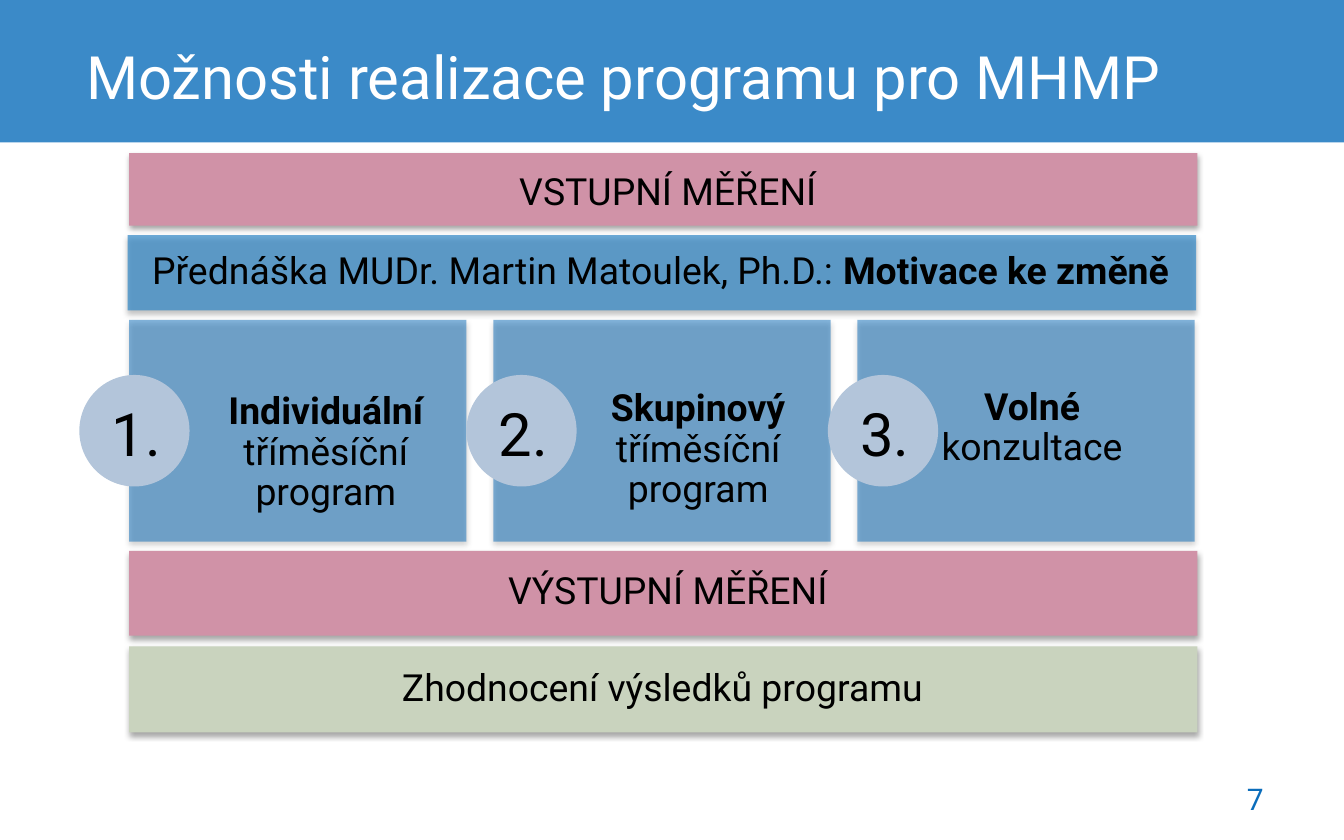
from dataclasses import dataclass

from lxml.etree import SubElement
from pptx import Presentation
from pptx.dml.color import RGBColor
from pptx.enum.shapes import MSO_SHAPE
from pptx.enum.text import MSO_ANCHOR, MSO_AUTO_SIZE, PP_ALIGN
from pptx.oxml.ns import qn
from pptx.util import Inches, Pt


@dataclass(frozen=True)
class Theme:
    font: str = "Roboto"
    brand: str = "0B6DBB"
    lecture: str = "3188C8"
    measure: str = "D092A7"
    result: str = "C9D3BE"
    badge: str = "B3C5DA"
    white: str = "FFFFFF"
    black: str = "000000"
    title_size: int = 32
    label_size: int = 20
    page_number_size: int = 16


THEME = Theme()


def place(item, box):
    item.left, item.top, item.width, item.height = (Inches(length) for length in box)


def add_panel(page, box, color, opacity=100, shape=MSO_SHAPE.RECTANGLE, shadow=False):
    panel = page.shapes.add_shape(shape, *(Inches(length) for length in box))
    panel.shadow.inherit = False
    panel.line.fill.background()
    panel.fill.solid()
    panel.fill.fore_color.rgb = RGBColor.from_string(color)
    if opacity < 100:
        tint = panel.fill._xPr.find(qn("a:solidFill"))[0]
        SubElement(tint, qn("a:alpha"), val=str(opacity * 1000))
    if shadow:
        effects = panel._element.spPr.find(qn("a:effectLst"))
        outer = SubElement(effects, qn("a:outerShdw"), blurRad=str(Pt(3.1)),
                           dist=str(Pt(1.8)), dir="5400000", rotWithShape="0")
        tint = SubElement(outer, qn("a:srgbClr"), val=THEME.black)
        SubElement(tint, qn("a:alpha"), val="35000")
    return panel


def write(item, spans, size, color=THEME.black, align=PP_ALIGN.CENTER,
          anchor=MSO_ANCHOR.TOP, line_spacing=None):
    """Fill a text holder with (text, bold) spans."""
    frame = item.text_frame
    frame.word_wrap = True
    frame.auto_size = MSO_AUTO_SIZE.NONE
    frame.vertical_anchor = anchor
    para = frame.paragraphs[0]
    para.alignment = align
    para.space_before = Pt(0)
    if line_spacing:
        para.line_spacing = line_spacing
    for text, bold in spans:
        span = para.add_run()
        span.text = text
        span.font.name = THEME.font
        span.font.size = Pt(size)
        span.font.bold = bold
        span.font.color.rgb = RGBColor.from_string(color)


def add_text(page, box, spans, size, **style):
    write(page.shapes.add_textbox(*(Inches(length) for length in box)),
          spans, size, **style)


def add_header(page, box, text):
    left, top, width, height = box
    add_panel(page, box, THEME.brand, opacity=80)
    title = page.shapes.title
    place(title, (left + 0.54, top + 0.04, width - 0.76, height - 0.02))
    write(title, [(text, False)], THEME.title_size, color=THEME.white,
          align=PP_ALIGN.LEFT, anchor=MSO_ANCHOR.MIDDLE)
    # Keep the title above the band
    page.shapes._spTree.append(title._element)


def add_bar(page, box, spans, color, opacity, label_box):
    left, top, _, _ = box
    shift, drop, width, height = label_box
    add_panel(page, box, color, opacity, shadow=True)
    add_text(page, (left + shift, top + drop, width, height), spans,
             THEME.label_size, line_spacing=0.9)


def add_card(page, box, number, spans, badge_shift, label_box, body=None):
    left, top, width, height = box
    add_panel(page, box, THEME.brand, opacity=50, shadow=True)

    # Label: the first card uses the body placeholder
    shift, drop, label_width = label_box
    label_place = (left + shift, top + drop, label_width, 0.72)
    if body is None:
        add_text(page, label_place, spans, THEME.label_size, line_spacing=0.9)
    else:
        place(body, label_place)
        properties = body.text_frame.paragraphs[0]._p.get_or_add_pPr()
        properties.set("marL", "0")
        properties.set("indent", "0")
        SubElement(properties, qn("a:buNone"))
        write(body, spans, THEME.label_size, line_spacing=0.9)
        page.shapes._spTree.append(body._element)

    # Number badge over the left edge
    badge_left, badge_top = left + badge_shift, top + 0.41
    add_panel(page, (badge_left, badge_top, 0.82, 0.83), THEME.badge,
              shape=MSO_SHAPE.OVAL)
    add_text(page, (badge_left + 0.08, badge_top + 0.11, 0.69, 0.64),
             [(f"{number}.", False)], THEME.title_size)


def add_cards(page, box):
    left, top, width, height = box
    card_width = 2.51
    pitch = (width - card_width) / 2
    cards = [
        ("Individuální", " tříměsíční program", -0.37, (0.42, 0.49, 2.09)),
        ("Skupinový", " tříměsíční program", -0.2, (0.47, 0.47, 2.11)),
        ("Volné", " konzultace", -0.22, (0.32, 0.46, 1.96)),
    ]
    for index, (lead, rest, badge_shift, label_box) in enumerate(cards):
        add_card(page, (left + index * pitch, top, card_width, height), index + 1,
                 [(lead, True), (rest, False)], badge_shift, label_box,
                 body=page.placeholders[1] if index == 0 else None)


def main():
    deck = Presentation()
    deck.slide_width, deck.slide_height = Inches(10), Inches(6.25)
    page = deck.slides.add_slide(deck.slide_layouts[1])

    add_header(page, (0, 0, 10, 1.06), "Možnosti realizace programu pro MHMP")
    add_cards(page, (0.96, 2.38, 7.93, 1.65))

    # Full-width programme stages
    bars = [
        ((0.96, 1.14, 7.95, 0.54), [("VSTUPNÍ MĚŘENÍ", False)],
         THEME.measure, 100, (0.07, 0.1, 7.88, 0.42)),
        ((0.95, 1.75, 7.95, 0.56),
         [("Přednáška MUDr. Martin Matoulek, Ph.D.: ", False),
          ("Motivace ke změně", True)],
         THEME.lecture, 70, (-0.13, 0.08, 8.19, 0.54)),
        ((0.96, 4.1, 7.95, 0.63), [("VÝSTUPNÍ MĚŘENÍ", False)],
         THEME.measure, 100, (0.07, 0.11, 7.88, 0.43)),
        ((0.96, 4.81, 7.95, 0.64), [("Zhodnocení výsledků programu", False)],
         THEME.result, 100, (0.03, 0.12, 7.88, 0.43)),
    ]
    for bar in bars:
        add_bar(page, *bar)

    # Page number
    add_text(page, (7.17, 5.78, 2.33, 0.33), [("7", False)],
             THEME.page_number_size, color=THEME.brand, align=PP_ALIGN.RIGHT,
             anchor=MSO_ANCHOR.MIDDLE)
    deck.save("out.pptx")


if __name__ == "__main__":
    main()
